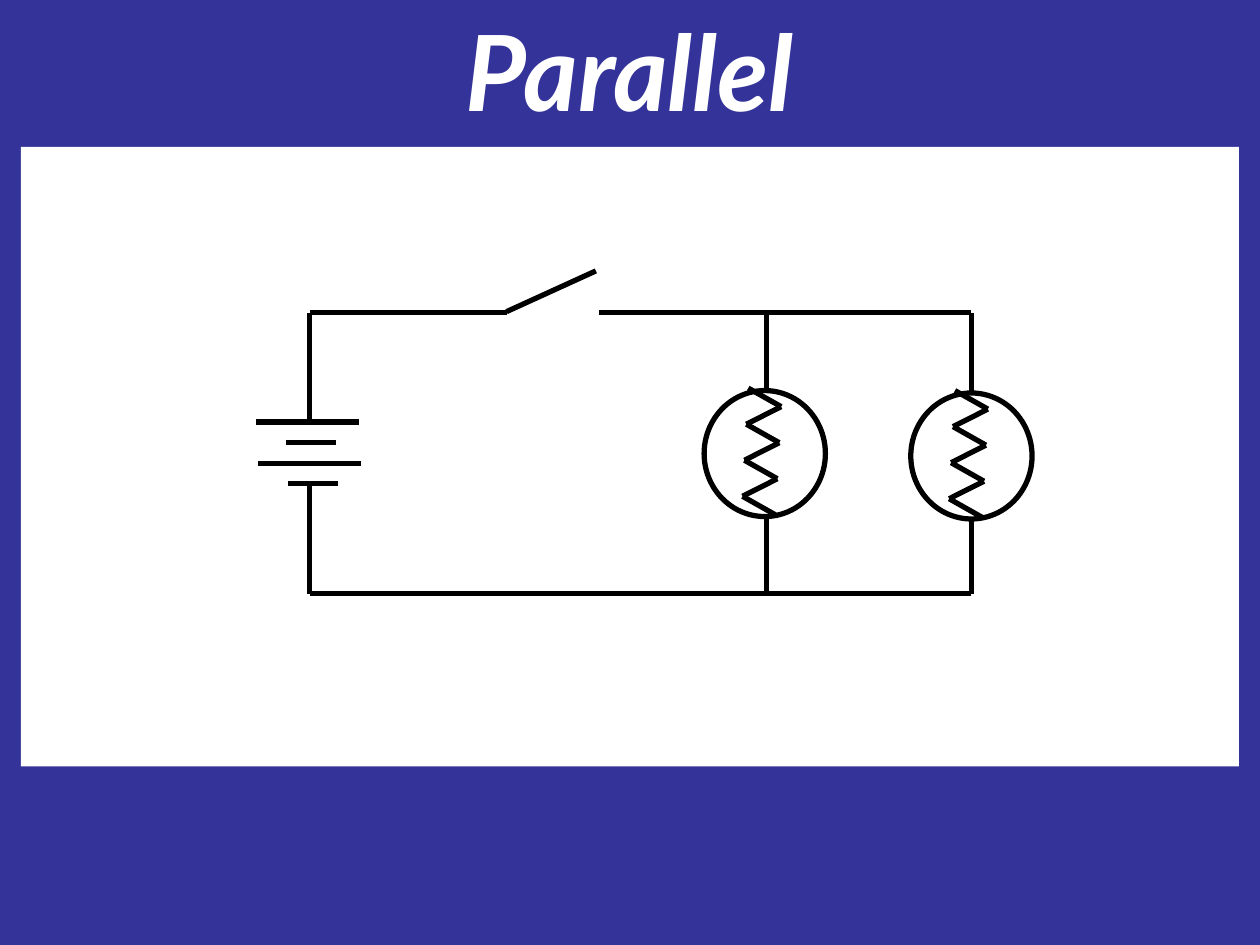
from itertools import pairwise

from lxml import etree
from pptx import Presentation
from pptx.dml.color import RGBColor
from pptx.enum.shapes import MSO_CONNECTOR, MSO_SHAPE
from pptx.enum.text import MSO_ANCHOR, PP_ALIGN
from pptx.oxml.ns import qn
from pptx.util import Pt

STRAIGHT = MSO_CONNECTOR.STRAIGHT
RECTANGLE = MSO_SHAPE.RECTANGLE
OVAL = MSO_SHAPE.OVAL
TOP = MSO_ANCHOR.TOP
CENTER = PP_ALIGN.CENTER

COLORS = {"background": "333399", "panel": "FFFFFF", "title": "FFFFFF", "wire": "000000"}
TITLE_FONT = {"name": "Lato", "size": Pt(60), "bold": True, "italic": True}
TITLE_FRAME = {"left": 0, "top": 0, "width": Pt(720), "height": Pt(84.2)}
WIRE_WIDTH = 3

LEFT, MIDDLE, RIGHT = 177, 438, 555.1
UPPER, LOWER = 178.8, 339.3
BATTERY_TOP, BATTERY_BOTTOM = 241.2, 276.5
WIRES = [
    ((LEFT, UPPER), (LEFT, BATTERY_TOP)),
    ((LEFT, BATTERY_BOTTOM), (LEFT, LOWER)),
    ((RIGHT, LOWER), (LEFT, LOWER)),
    ((RIGHT, UPPER), (342, UPPER)),
    ((289.5, UPPER), (LEFT, UPPER)),
    ((MIDDLE, UPPER), (MIDDLE, LOWER)),
    ((RIGHT, UPPER), (RIGHT, LOWER)),
]
SWITCH = ((340.5, 154.8), (289.5, 178.1))
BATTERY_PLATES = [(146.4, 58.8), (163.4, 28.8), (147.6, 58.8), (164.4, 28.8)]
BULB_CENTERS = [(RIGHT, 260.6), (437, 259.2)]
BULB_WIDTH, BULB_HEIGHT = 69.3, 72


def color(key):
    """Return the named colour."""
    return RGBColor.from_string(COLORS[key])


def add_title(page, text):
    """Place and format the title."""
    box = page.shapes.title
    for name, value in TITLE_FRAME.items():
        setattr(box, name, value)
    frame = box.text_frame
    frame.vertical_anchor = TOP
    para = frame.paragraphs[0]
    para.alignment = CENTER
    span = para.add_run()
    span.text = text
    for name, value in TITLE_FONT.items():
        setattr(span.font, name, value)
    span.font.color.rgb = color("title")


def add_filled(page, kind, left, top, width, height):
    """Add an unoutlined white shape."""
    shape = page.shapes.add_shape(kind, Pt(left), Pt(top), Pt(width), Pt(height))
    shape.shadow.inherit = False
    shape.fill.solid()
    shape.fill.fore_color.rgb = color("panel")
    shape.line.fill.background()
    return shape


def format_line(line):
    """Give a line the wire colour and width."""
    line.color.rgb = color("wire")
    line.width = Pt(WIRE_WIDTH)


def add_wire(page, start, end):
    """Add a straight wire between two points."""
    wire = page.shapes.add_connector(STRAIGHT, *map(Pt, (*start, *end)))
    format_line(wire.line)
    etree.SubElement(wire._element.spPr, qn("a:effectLst"))


def add_battery(page):
    """Add the evenly spaced battery plates."""
    gap = (BATTERY_BOTTOM - BATTERY_TOP) / (len(BATTERY_PLATES) - 1)
    for index, (left, width) in enumerate(BATTERY_PLATES):
        height = BATTERY_TOP + index * gap
        add_wire(page, (left, height), (left + width, height))


def add_bulb(page, x, y):
    """Add a bulb with a zigzag filament around its centre."""
    glass = add_filled(page, OVAL, x - BULB_WIDTH / 2, y - BULB_HEIGHT / 2,
                       BULB_WIDTH, BULB_HEIGHT)
    format_line(glass.line)
    corners = []
    for turn in range(4):
        drift, drop = 1.1 * turn, 20.6 * turn
        corners.append((x - 9.4 - drift, y - 37.4 + drop))
        corners.append((x + 9.4 - drift, y - 26.8 + drop))
    for start, end in pairwise(corners):
        add_wire(page, start, end)


def main():
    """Build the parallel circuit slide."""
    deck = Presentation()
    deck.slide_width, deck.slide_height = Pt(720), Pt(540)
    page = deck.slides.add_slide(deck.slide_layouts[5])
    page.background.fill.solid()
    page.background.fill.fore_color.rgb = color("background")
    add_title(page, "Parallel")
    add_filled(page, RECTANGLE, 12, 84, 696, 354)
    for start, end in [*WIRES, SWITCH]:
        add_wire(page, start, end)
    add_battery(page)
    for x, y in BULB_CENTERS:
        add_bulb(page, x, y)
    deck.save("out.pptx")


if __name__ == "__main__":
    main()
